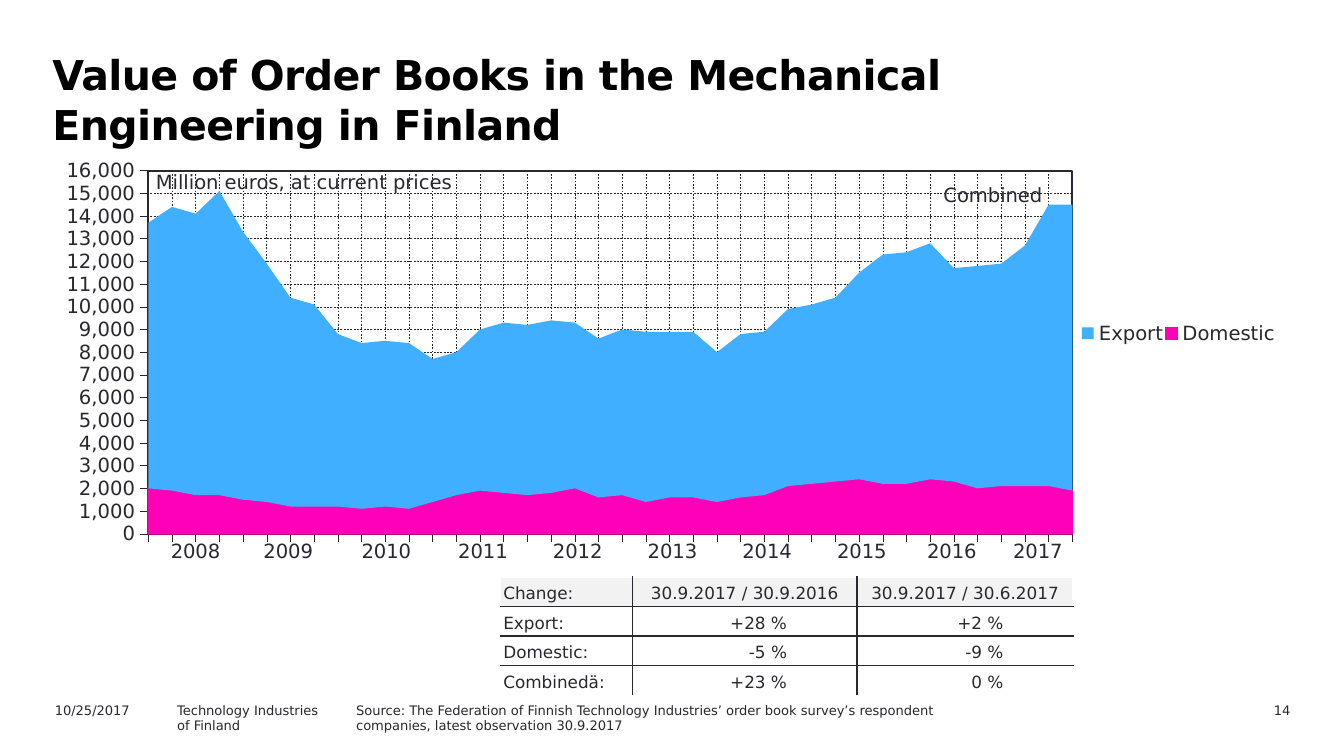
from typing import NamedTuple

from lxml import etree
from pptx import Presentation
from pptx.chart.data import CategoryChartData
from pptx.dml.color import RGBColor
from pptx.enum.chart import XL_CHART_TYPE, XL_LEGEND_POSITION, XL_TICK_LABEL_POSITION, XL_TICK_MARK
from pptx.enum.dml import MSO_LINE
from pptx.enum.text import MSO_ANCHOR, MSO_AUTO_SIZE, PP_ALIGN
from pptx.oxml import parse_xml
from pptx.oxml.ns import nsdecls, qn
from pptx.util import Inches, Pt

LEFT, CENTER, RIGHT = PP_ALIGN.LEFT, PP_ALIGN.CENTER, PP_ALIGN.RIGHT
TOP, BOTTOM = MSO_ANCHOR.TOP, MSO_ANCHOR.BOTTOM
AREA_STACKED = XL_CHART_TYPE.AREA_STACKED
LEGEND_RIGHT = XL_LEGEND_POSITION.RIGHT
NO_LABELS = XL_TICK_LABEL_POSITION.NONE
TICK_OUT, TICK_NONE = XL_TICK_MARK.OUTSIDE, XL_TICK_MARK.NONE
DASH = MSO_LINE.DASH
NO_AUTOFIT = MSO_AUTO_SIZE.NONE

FONT = "DejaVu Sans"
INK, BLACK, WHITE, PALE = "29282E", "000000", "FFFFFF", "F2F2F2"
PINK, BLUE = "FF00B8", "40AFFF"
WIDTH = Inches(10)
HEIGHT = WIDTH * 9 // 16
PLAIN_TABLE = "{2D5ABB26-0587-4C30-8999-92F81FD0307C}"
FOOTER_TOP = 92
NUMBERED_QUARTERS = 38


class Area(NamedTuple):
    """Place on the slide in percent of its width and height."""
    left: float
    top: float
    width: float
    height: float

    def lengths(self):
        """Return left, top, width and height as slide lengths."""
        sides = (WIDTH, HEIGHT, WIDTH, HEIGHT)
        return [int(share * side / 100) for share, side in zip(self, sides)]


class Label(NamedTuple):
    """Free text with its place and format."""
    area: Area
    lines: list[str]
    size: float = 7
    align: int = LEFT
    margins: tuple[float, float] = (0.1, 0.05)


class Band(NamedTuple):
    """One stacked area of the chart, in hundreds of million euros."""
    name: str
    color: str
    hundreds: list[int]


LABELS = [
    Label(Area(3.1, FOOTER_TOP, 10, 3.2), ["10/25/2017"]),
    Label(Area(12.2, FOOTER_TOP, 18, 3.2), ["Technology Industries", "of Finland"]),
    Label(Area(87.6, FOOTER_TOP, 9.4, 3.2), ["14"], align=RIGHT),
    Label(Area(10.7, 21.6, 24.4, 4.8), ["Million euros, at current prices"], 10.5, margins=(0.09, 0.05)),
    Label(Area(69.3, 23.5, 10.6, 4.8), ["Combined"], 10.5, margins=(0.09, 0.04)),
]
BANDS = [
    Band("Domestic", PINK, [
        20, 19, 17, 17, 15, 14, 12, 12, 12, 11, 12, 11, 14, 17, 19, 18, 17, 18, 20, 16,
        17, 14, 16, 16, 14, 16, 17, 21, 22, 23, 24, 22, 22, 24, 23, 20, 21, 21, 21, 19]),
    Band("Export", BLUE, [
        117, 125, 124, 134, 118, 105, 92, 89, 76, 73, 73, 73, 63, 63, 71, 75, 75, 76, 73, 70,
        73, 75, 73, 73, 66, 72, 72, 78, 79, 81, 91, 101, 102, 104, 94, 98, 98, 106, 124, 126]),
]
CHANGES = [
    ["Change:", "30.9.2017 / 30.9.2016", "30.9.2017 / 30.6.2017"],
    ["Export:", "+28 %", "+2 %"],
    ["Domestic:", "-5 %", "-9 %"],
    ["Combinedä:", "+23 %", "0 %"],
]
CHANGE_WIDTHS = [0.98, 1.67, 1.61]
YEAR_WIDTHS = [0.69, 0.69, 0.77, 0.67, 0.74, 0.67, 0.74, 0.67, 0.67, 0.61]


def rgb(color: str) -> RGBColor:
    """Turn a hex string into a colour."""
    return RGBColor.from_string(color)


def style_font(font, size: float, color: str = INK, bold: bool = False) -> None:
    """Set typeface, size, colour and weight."""
    font.name, font.size, font.bold = FONT, Pt(size), bold
    font.color.rgb = rgb(color)


def write_text(frame, lines: list[str], *, size: float, color: str = INK, bold: bool = False,
               align: int = LEFT, line_height: float | None = None, tracking: int = 0) -> None:
    """Fill a text frame with one paragraph per line."""
    for index, line in enumerate(lines):
        para = frame.add_paragraph() if index else frame.paragraphs[0]
        para.alignment = align
        para.space_before = Pt(0)
        if line_height:
            para.line_spacing = Pt(line_height)
        span = para.add_run()
        span.text = line
        style_font(span.font, size, color, bold)
        if tracking:
            span.font._element.set("spc", str(tracking))


def fill_placeholder(holder, area: Area, line: str, **text_format) -> None:
    """Move a template placeholder and write unbulleted text in it."""
    holder.left, holder.top, holder.width, holder.height = area.lengths()
    frame = holder.text_frame
    frame.auto_size, frame.vertical_anchor = NO_AUTOFIT, TOP
    write_text(frame, [line], **text_format)
    properties = frame.paragraphs[0]._p.get_or_add_pPr()
    properties.set("marL", "0")
    properties.set("indent", "0")
    etree.SubElement(properties, qn("a:buNone"))


def add_label(page, label: Label) -> None:
    """Draw one free text."""
    frame = page.shapes.add_textbox(*label.area.lengths()).text_frame
    frame.word_wrap = True
    frame.margin_left = frame.margin_right = Inches(label.margins[0])
    frame.margin_top = frame.margin_bottom = Inches(label.margins[1])
    write_text(frame, label.lines, size=label.size, align=label.align)


def place_manually(layout_parent, position: int, inner: bool, shares: tuple) -> None:
    """Give a chart part a fixed place in shares of the chart."""
    for old in layout_parent.findall(qn("c:layout")):
        layout_parent.remove(old)
    target = '<c:layoutTarget val="inner"/>' if inner else ""
    modes = '<c:xMode val="edge"/><c:yMode val="edge"/>'
    sizes = "".join(f'<c:{key} val="{share}"/>' for key, share in zip("xywh", shares))
    layout_parent.insert(position, parse_xml(
        f'<c:layout {nsdecls("c")}><c:manualLayout>{target}{modes}{sizes}</c:manualLayout></c:layout>'))


def style_axis(axis) -> None:
    """Give an axis its ticks, line and dashed grid."""
    axis.major_tick_mark, axis.minor_tick_mark = TICK_OUT, TICK_NONE
    axis.has_major_gridlines = True
    grid = axis.major_gridlines.format.line
    for line, width in ((axis.format.line, 0.22), (grid, 0.25)):
        line.color.rgb, line.width = rgb(INK), Pt(width)
    grid.dash_style = DASH


def add_order_chart(page, area: Area) -> None:
    """Draw the stacked areas of the order books."""
    data = CategoryChartData(number_format="#,##0")
    data.categories = [str(quarter + 1) for quarter in range(NUMBERED_QUARTERS)]
    for band in BANDS:
        data.add_series(band.name, [value * 100 for value in band.hundreds])
    chart = page.shapes.add_chart(AREA_STACKED, *area.lengths(), data).chart
    style_font(chart.font, 10.5)
    chart.has_title = False
    chart.plots[0].vary_by_categories = False
    for series, band in zip(chart.plots[0].series, BANDS):
        series.format.fill.solid()
        series.format.fill.fore_color.rgb = rgb(band.color)
    edge = chart.plots[0].series[0].format.line
    edge.color.rgb, edge.width = rgb(PINK), Pt(0.88)

    values, quarters = chart.value_axis, chart.category_axis
    for axis in (values, quarters):
        style_axis(axis)
    quarters.tick_label_position = NO_LABELS
    values.minimum_scale, values.maximum_scale, values.major_unit = 0, 16000, 1000
    values.tick_labels.number_format, values.tick_labels.number_format_is_linked = "#,##0", False
    style_font(values.tick_labels.font, 10.5)
    values._element.find(qn("c:crossBetween")).set("val", "midCat")

    chart.has_legend = True
    chart.legend.position, chart.legend.include_in_layout = LEGEND_RIGHT, False
    style_font(chart.legend.font, 10.5)
    place_manually(chart.legend._element, 1, False, (0.83, 0.39, 0.16, 0.07))
    plot_area = chart._chartSpace.chart.plotArea
    place_manually(plot_area, 0, True, (0.075, 0.029, 0.749, 0.885))
    plot_area.append(parse_xml(
        f'<c:spPr {nsdecls("c", "a")}><a:noFill/><a:ln w="12700"><a:solidFill>'
        f'<a:srgbClr val="{INK}"/></a:solidFill></a:ln></c:spPr>'))


def add_plain_table(page, area: Area, rows: int, widths: list[float]):
    """Add an unstyled table with the given column widths."""
    table = page.shapes.add_table(rows, len(widths), *area.lengths()).table
    table.first_row = table.horz_banding = False
    table._tbl.tblPr.find(qn("a:tableStyleId")).text = PLAIN_TABLE
    for column, width in zip(table.columns, widths):
        column.width = Inches(width)
    return table


def fill_cell(cell, text: str, margins: tuple, fill: str | None = None, anchor=TOP, **text_format) -> None:
    """Write a cell with margins in the order left, top, right, bottom."""
    cell.margin_left, cell.margin_top, cell.margin_right, cell.margin_bottom = map(Inches, margins)
    cell.vertical_anchor = anchor
    if fill:
        cell.fill.solid()
        cell.fill.fore_color.rgb = rgb(fill)
    else:
        cell.fill.background()
    write_text(cell.text_frame, [text], **text_format)


def add_change_table(page, area: Area) -> None:
    """Draw the table of changes, ruled on inner edges only."""
    table = add_plain_table(page, area, len(CHANGES), CHANGE_WIDTHS)
    last_row, last_column = len(CHANGES) - 1, len(CHANGE_WIDTHS) - 1
    fills = {0: PALE, last_row: WHITE}
    for row, texts in enumerate(CHANGES):
        for column, text in enumerate(texts):
            is_value = row > 0 and column > 0
            align = RIGHT if is_value else CENTER if column else LEFT
            cell = table.cell(row, column)
            fill_cell(cell, text, (0.02, 0.02, 0.52 if is_value else 0.02, 0.02),
                      fills.get(row), BOTTOM, size=9, align=align)
            outer = {"L": column == 0, "R": column == last_column, "T": row == 0, "B": row == last_row}
            for position, (side, is_outer) in enumerate(outer.items()):
                cell._tc.get_or_add_tcPr().insert(position, parse_xml(
                    f'<a:ln{side} {nsdecls("a")} w="12700"><a:solidFill>'
                    f'<a:srgbClr val="{WHITE if is_outer else INK}"/></a:solidFill></a:ln{side}>'))


def add_year_row(page, area: Area) -> None:
    """Write the years below the chart."""
    table = add_plain_table(page, area, 1, YEAR_WIDTHS)
    for column in range(len(YEAR_WIDTHS)):
        fill_cell(table.cell(0, column), str(2008 + column), (0.1, 0.05, 0.1, 0.05), size=10.5, align=CENTER)


def main() -> None:
    """Build and save the slide."""
    deck = Presentation()
    deck.slide_width, deck.slide_height = WIDTH, HEIGHT
    page = deck.slides.add_slide(deck.slide_layouts[1])
    fill_placeholder(page.shapes.title, Area(2.9, 5.5, 87.4, 12.6),
                     "Value of Order Books in the Mechanical Engineering in Finland",
                     size=22, color=BLACK, bold=True, line_height=27, tracking=-30)
    fill_placeholder(page.placeholders[1], Area(25.5, FOOTER_TOP, 50, 4.6),
                     "Source: The Federation of Finnish Technology Industries’ order book survey’s "
                     "respondent companies, latest observation 30.9.2017", size=7)
    add_order_chart(page, Area(4.15, 21, 91.8, 54.3))
    add_change_table(page, Area(37.25, 76.3, 42.7, 15.7))
    add_year_row(page, Area(11.1, 70.6, 69.4, 5.7))
    for label in LABELS:
        add_label(page, label)
    deck.save("out.pptx")


if __name__ == "__main__":
    main()
